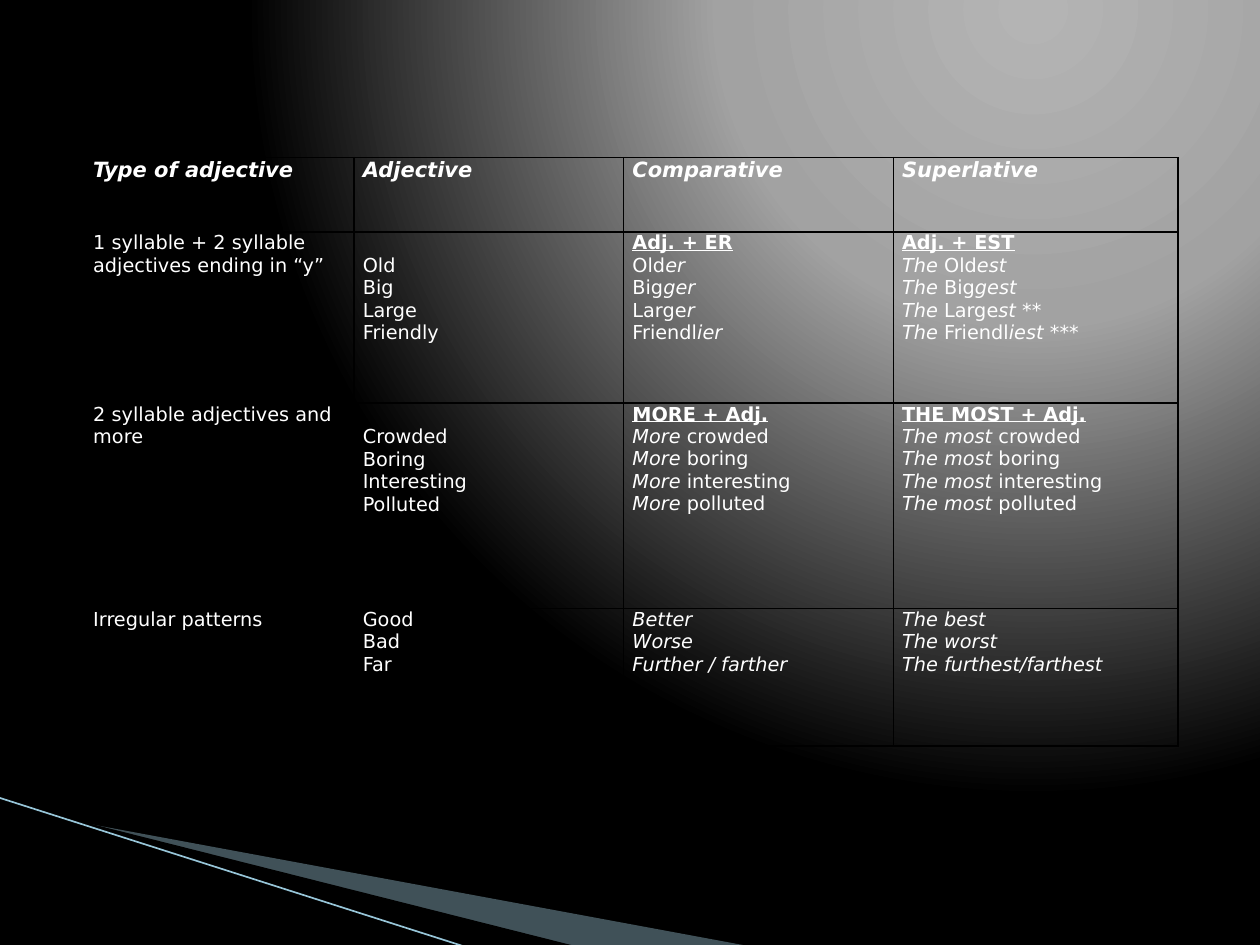
from pptx import Presentation
from pptx.dml.color import RGBColor
from pptx.oxml import parse_xml
from pptx.oxml.ns import nsdecls, qn
from pptx.util import Inches, Pt
from lxml import etree

COLORS = {
    "text": "FFFFFF",
    "border": "000000",
    "wedge": "A0CBDC",
    "shade": "000000",
    "stripe": "97C5D8",
    "glow": "B4B4B4",
    "halo": "A2A2A2",
    "dark": "000000",
}
FONT = "DejaVu Sans"
LINE_HEIGHT = 0.18
COLUMN_WIDTHS = [2.14, 2.14, 2.14, 2.26]
ROW_HEIGHTS = [0.59, 1.36, 1.63, 1.09]
LONG_ADJECTIVES = ["crowded", "boring", "interesting", "polluted"]

# "_" switches italics, "#" opens a rule heading
GRAMMAR = [
    [["_Type of adjective_"], ["_Adjective_"], ["_Comparative_"], ["_Superlative_"]],
    [
        ["1 syllable + 2 syllable adjectives ending in “y”"],
        ["Old", "Big", "Large", "Friendly"],
        ["#Adj. + ER", "Old_er_", "Big_ger_", "Large_r_", "Friendl_ier_"],
        ["#Adj. + EST", "_The_ Old_est_", "_The_ Big_gest_",
         "_The _Large_st _**", "_The _Friendl_iest_ ***"],
    ],
    [
        ["2 syllable adjectives and more"],
        [word.capitalize() for word in LONG_ADJECTIVES],
        ["#MORE + Adj."] + [f"_More_ {word}" for word in LONG_ADJECTIVES],
        ["#THE MOST + Adj."] + [f"_The most_ {word}" for word in LONG_ADJECTIVES],
    ],
    [
        ["Irregular patterns"],
        ["Good", "Bad", "Far"],
        ["_Better_", "_Worse_", "_Further / farther_"],
        ["_The best_", "_The worst_", "_The furthest/farthest_"],
    ],
]


def rgb(name):
    return RGBColor.from_string(COLORS[name])


def paint_background(slide):
    stops = "".join(
        f'<a:gs pos="{position * 1000}"><a:srgbClr val="{COLORS[name]}"/></a:gs>'
        for position, name in [(0, "glow"), (40, "halo"), (100, "dark")]
    )
    slide.element.cSld.insert(0, parse_xml(
        f'<p:bg {nsdecls("p", "a")}><p:bgPr><a:gradFill rotWithShape="1">'
        f'<a:gsLst>{stops}</a:gsLst><a:path path="circle">'
        '<a:fillToRect l="65000" t="0" r="0" b="98000"/></a:path>'
        '</a:gradFill><a:effectLst/></p:bgPr></p:bg>'
    ))


def add_wedge(slide, left, top, corners, color, opacity=100):
    points = [(Inches(left + x), Inches(top + y)) for x, y in corners]
    builder = slide.shapes.build_freeform(*points[0])
    builder.add_line_segments(points[1:], close=True)
    wedge = builder.convert_to_shape()
    wedge.shadow.inherit = False
    wedge.fill.solid()
    wedge.fill.fore_color.rgb = rgb(color)
    wedge.line.fill.background()
    if opacity < 100:
        tint = wedge.element.spPr.find(qn("a:solidFill"))[0]
        etree.SubElement(tint, qn("a:alpha")).set("val", str(opacity * 1000))


def add_corner_decor(slide, left, top):
    add_wedge(slide, left + 0.56, top + 0.17,
              [(0, 0.01), (5.4, 1.01), (4.01, 1.01), (0, 0)], "wedge", 40)
    add_wedge(slide, left + 0.54, top + 0.16,
              [(0, 0), (4.04, 1.02), (3.19, 1.03), (0.01, 0.01)], "shade")
    stripe = slide.shapes.add_connector(
        1, Inches(left), Inches(top), Inches(left + 3.72), Inches(top + 1.19))
    stripe.line.color.rgb = rgb("stripe")
    stripe.line.width = Pt(0.95)
    etree.SubElement(stripe.element.spPr, qn("a:effectLst"))


def border_cell(cell):
    properties = cell._tc.get_or_add_tcPr()
    for index, side in enumerate("LRTB"):
        properties.insert(index, parse_xml(
            f'<a:ln{side} {nsdecls("a")} w="12700"><a:solidFill>'
            f'<a:srgbClr val="{COLORS["border"]}"/></a:solidFill></a:ln{side}>'
        ))


def write_line(paragraph, line, size, bold):
    heading = line.startswith("#")
    for index, part in enumerate(line.lstrip("#").split("_")):
        if not part:
            continue
        run = paragraph.add_run()
        run.text = part
        style = {"name": FONT, "size": Pt(size), "bold": bold or heading,
                 "italic": index % 2 == 1, "underline": heading}
        for attribute, value in style.items():
            setattr(run.font, attribute, value)
        run.font.color.rgb = rgb("text")


def fill_cell(cell, lines, is_header, top_margin):
    margins = {"margin_left": 0.07, "margin_right": 0.07,
               "margin_top": top_margin, "margin_bottom": 0}
    for attribute, value in margins.items():
        setattr(cell, attribute, Inches(value))
    cell.fill.background()
    border_cell(cell)
    for index, line in enumerate(lines):
        frame = cell.text_frame
        paragraph = frame.paragraphs[0] if index == 0 else frame.add_paragraph()
        write_line(paragraph, line, 12 if is_header else 11, is_header)


def add_grammar_table(slide, left, top, width, height):
    table = slide.shapes.add_table(
        len(ROW_HEIGHTS), len(COLUMN_WIDTHS),
        Inches(left), Inches(top), Inches(width), Inches(height)).table
    table.first_row = table.horz_banding = False
    for column, column_width in zip(table.columns, COLUMN_WIDTHS):
        column.width = Inches(column_width)
    for row, row_height, contents in zip(table.rows, ROW_HEIGHTS, GRAMMAR):
        row.height = Inches(row_height)
        has_heading = contents[2][0].startswith("#")
        for index, (cell, lines) in enumerate(zip(row.cells, contents)):
            beside_heading = has_heading and index == 1
            fill_cell(cell, lines, contents is GRAMMAR[0],
                      LINE_HEIGHT if beside_heading else 0)


def main():
    presentation = Presentation()
    presentation.slide_width = Inches(10)
    presentation.slide_height = Inches(7.5)
    slide = presentation.slides.add_slide(presentation.slide_layouts[6])
    paint_background(slide)
    add_corner_decor(slide, -0.01, 6.33)
    add_grammar_table(slide, 0.67, 1.25, 8.67, 4.67)
    presentation.save("out.pptx")


if __name__ == "__main__":
    main()
